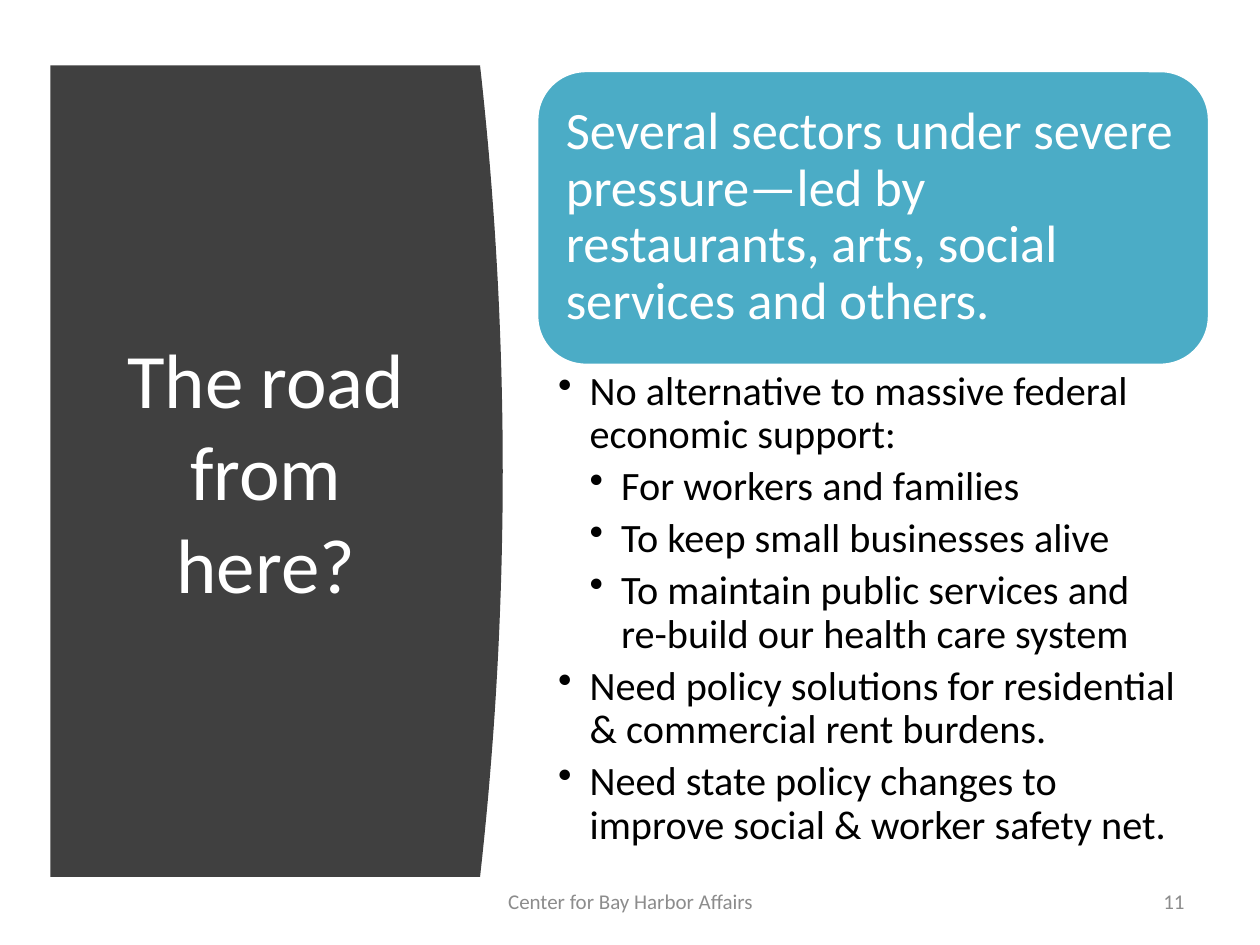
import dataclasses

import lxml.etree
import pptx
import pptx.dml.color
import pptx.enum.shapes
import pptx.enum.text
import pptx.oxml.ns
import pptx.util

Inches = pptx.util.Inches
Pt = pptx.util.Pt
RGBColor = pptx.dml.color.RGBColor
Align = pptx.enum.text.PP_ALIGN
Anchor = pptx.enum.text.MSO_ANCHOR

DARK = RGBColor(0x40, 0x40, 0x40)
TEAL = RGBColor(0x4B, 0xAC, 0xC6)
GRAY = RGBColor(0x8C, 0x8C, 0x8C)
WHITE = RGBColor(0xFF, 0xFF, 0xFF)
BLACK = RGBColor(0, 0, 0)
FONT = "Calibri"


@dataclasses.dataclass
class Box:
    left: float
    top: float
    width: float
    height: float

    def place(self) -> list:
        return [Inches(n) for n in dataclasses.astuple(self)]


@dataclasses.dataclass
class Point:
    text: str
    level: int = 1


POINTS = [
    Point("No alternative to massive federal economic support:"),
    Point("For workers and families", 2),
    Point("To keep small businesses alive", 2),
    Point("To maintain public services and re-build our health care system", 2),
    Point("Need policy solutions for residential & commercial rent burdens."),
    Point("Need state policy changes to improve social & worker safety net."),
]


def add_bullet(para, level: int) -> None:
    """Give a paragraph a hanging bullet at its level."""
    para.level = level - 1
    props = para._p.get_or_add_pPr()
    props.set("marL", str(Inches(0.25 * level)))
    props.set("indent", str(Inches(-0.25)))
    mark = lxml.etree.SubElement(props, pptx.oxml.ns.qn("a:buChar"))
    mark.set("char", "•")


def add_text(slide, box: Box, points: list[Point], *, size: float,
             color: RGBColor, align=Align.LEFT, anchor=Anchor.MIDDLE,
             inset=(0.1, 0.05, 0.1, 0.05), line: float = 1.0,
             after: float = 0, bullet: bool = False) -> None:
    """Add a wrapped text box with one paragraph for each point."""
    frame = slide.shapes.add_textbox(*box.place()).text_frame
    frame.word_wrap = True
    frame.vertical_anchor = anchor
    (frame.margin_left, frame.margin_top,
     frame.margin_right, frame.margin_bottom) = map(Inches, inset)
    for i, point in enumerate(points):
        para = frame.add_paragraph() if i else frame.paragraphs[0]
        para.alignment = align
        para.line_spacing = line
        para.space_after = Pt(after)
        if bullet:
            add_bullet(para, point.level)
        run = para.add_run()
        run.text = point.text
        run.font.name = FONT
        run.font.size = Pt(size)
        run.font.color.rgb = color


def paint(shape, fill: RGBColor) -> None:
    shape.shadow.inherit = False
    shape.fill.solid()
    shape.fill.fore_color.rgb = fill
    shape.line.fill.background()


def add_panel(slide, box: Box, bulge: float, steps: int = 40) -> None:
    """Draw a panel whose right side bows out as a shallow curve."""
    edge, base = box.left + box.width, box.top + box.height
    curve = []
    for i in range(steps + 1):
        t = 2 * i / steps - 1
        curve.append((Inches(edge - bulge * t * t),
                      Inches(box.top + box.height * i / steps)))
    pen = slide.shapes.build_freeform(Inches(box.left), Inches(box.top))
    pen.add_line_segments(curve + [(Inches(box.left), Inches(base))], close=True)
    paint(pen.convert_to_shape(), DARK)


def main() -> None:
    deck = pptx.Presentation()
    deck.slide_width, deck.slide_height = Inches(10), Inches(7.5)
    slide = deck.slides.add_slide(deck.slide_layouts[6])

    # Title panel
    add_panel(slide, Box(0.4, 0.52, 3.59, 6.44), bulge=0.18)
    add_text(slide, Box(0.71, 1.11, 2.8, 5.24), [Point("The road from here?")],
             size=44, color=WHITE, align=Align.CENTER)

    # Headline card
    card = slide.shapes.add_shape(
        pptx.enum.shapes.MSO_SHAPE.ROUNDED_RECTANGLE,
        *Box(4.26, 0.56, 5.34, 2.34).place())
    paint(card, TEAL)
    card.line.color.rgb = WHITE
    card.line.width = Pt(2)
    lead = Point("Several sectors under severe pressure—led by restaurants, "
                 "arts, social services and others.")
    add_text(slide, Box(4.37, 0.67, 5.11, 2.11), [lead], size=30, color=WHITE,
             inset=(0.12,) * 4, line=0.9)

    # Bullet list
    add_text(slide, Box(4.26, 2.9, 5.34, 4.01), POINTS, size=23, color=BLACK,
             anchor=Anchor.TOP, inset=(0.17, 0.04, 0.23, 0.04), line=0.9,
             after=4.9, bullet=True)

    # Footer and page number
    add_text(slide, Box(3.42, 6.95, 3.17, 0.4),
             [Point("Center for Bay Harbor Affairs")],
             size=12, color=GRAY, align=Align.CENTER)
    add_text(slide, Box(7.17, 6.95, 2.33, 0.4), [Point("11")],
             size=12, color=GRAY, align=Align.RIGHT)

    deck.save("out.pptx")


if __name__ == "__main__":
    main()
